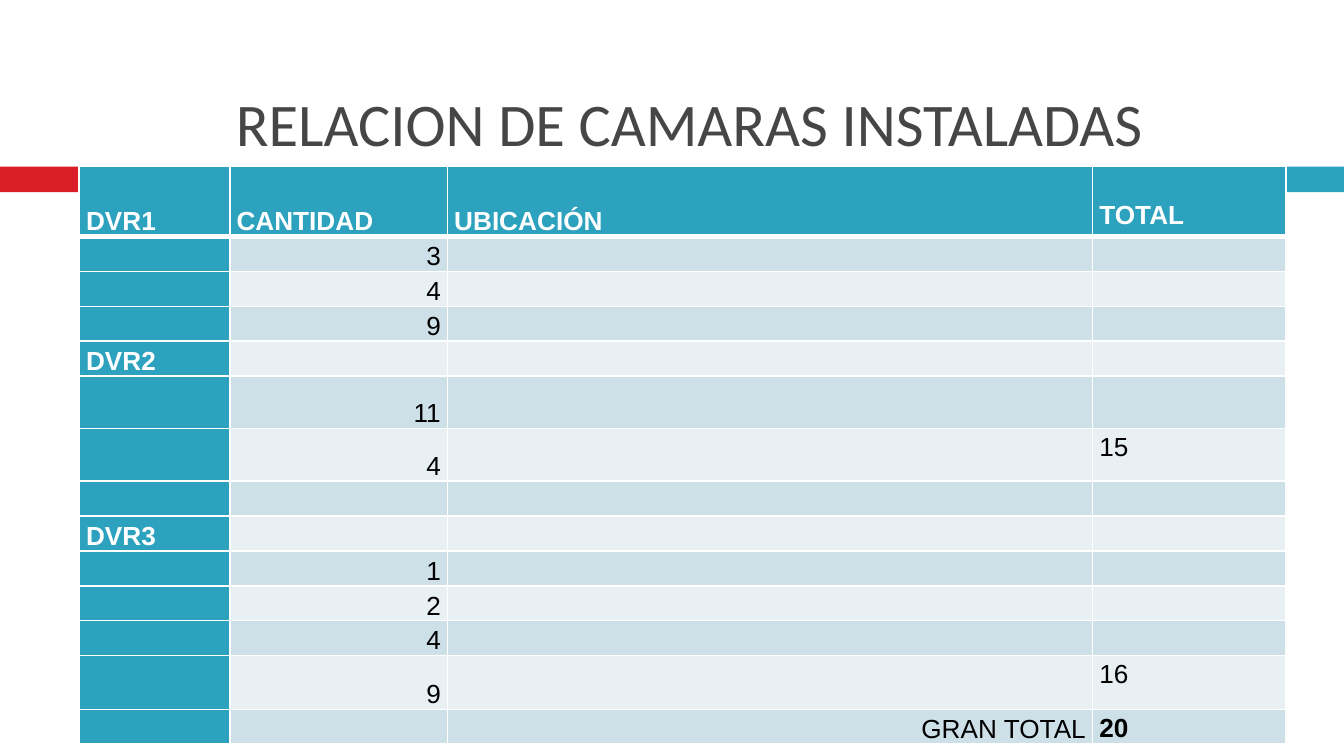
from lxml.etree import SubElement
from pptx import Presentation
from pptx.dml.color import RGBColor
from pptx.enum.shapes import MSO_SHAPE
from pptx.enum.text import MSO_ANCHOR, PP_ALIGN
from pptx.oxml.ns import qn
from pptx.util import Inches, Pt

# Content
TITLE = "RELACION DE CAMARAS INSTALADAS"
HEAD = ("DVR1", "CANTIDAD", "UBICACIÓN", "TOTAL")
# Each row: height, then the four cells
ROWS = [
    (0.52, *HEAD),
    (0.26, "", "3", "", ""),
    (0.26, "", "4", "", ""),
    (0.26, "", "9", "", ""),
    (0.26, "DVR2", "", "", ""),
    (0.39, "", "11", "", ""),
    (0.39, "", "4", "", "15"),
    (0.26, "", "", "", ""),
    (0.26, "DVR3", "", "", ""),
    (0.26, "", "1", "", ""),
    (0.26, "", "2", "", ""),
    (0.26, "", "4", "", ""),
    (0.4, "", "9", "", "16"),
    (0.26, "", "", "GRAN TOTAL", "20"),
]
COLS = (1.12, 1.62, 4.8, 1.44)
COLORS = {
    "red": "DA1F28", "teal": "2DA2BF", "dark": "CDE0E8", "light": "E8F0F4",
    "title": "464646", "white": "FFFFFF", "black": "000000",
}
BARS = [(0, 0.58, "red"), (0.65, 9.35, "teal")]
TOP = 1.24


def color(name):
    return RGBColor.from_string(COLORS[name])


def add_run(para, text, font, size, tone, bold=False):
    run = para.add_run()
    run.text = text
    run.font.name = font
    run.font.size = Pt(size)
    run.font.bold = bold
    run.font.color.rgb = color(tone)


def add_edges(cell, row):
    """White lines, thick between the header and the body."""
    props = cell._tc.get_or_add_tcPr()
    thick = {0: "lnB", 1: "lnT"}.get(row)
    for side in ("lnL", "lnR", "lnT", "lnB"):
        width = Pt(3 if side == thick else 1)
        line = SubElement(props, qn(f"a:{side}"), w=str(width))
        fill = SubElement(line, qn("a:solidFill"))
        SubElement(fill, qn("a:srgbClr"), val=COLORS["white"])


def fill_cell(cell, row, col, text):
    main = row == 0 or col == 0
    add_edges(cell, row)
    cell.fill.solid()
    cell.fill.fore_color.rgb = color("teal" if main else "dark" if row % 2 else "light")
    cell.margin_left = cell.margin_right = Inches(0.05)
    cell.margin_top = cell.margin_bottom = 0
    low = col < 3 or row == 0
    cell.vertical_anchor = MSO_ANCHOR.BOTTOM if low else MSO_ANCHOR.TOP
    para = cell.text_frame.paragraphs[0]
    para.line_spacing = 1.15
    if not text:
        SubElement(para._p, qn("a:endParaRPr"), sz="1400")
        return
    para.alignment = PP_ALIGN.RIGHT if not main and col < 3 else PP_ALIGN.LEFT
    last = row == len(ROWS) - 1 and col == 3
    add_run(para, text, "Arial", 14, "white" if main else "black", main or last)


deck = Presentation()
# A 16:9 page
deck.slide_width = Inches(10)
deck.slide_height = deck.slide_width * 9 // 16
slide = deck.slides.add_slide(deck.slide_layouts[5])

# Title
title = slide.shapes.title
title.left, title.top = Inches(0.67), Inches(0.13)
title.width, title.height = Inches(8.92), Inches(1.1)
frame = title.text_frame
frame.word_wrap = True
frame.vertical_anchor = MSO_ANCHOR.BOTTOM
frame.paragraphs[0].alignment = PP_ALIGN.CENTER
add_run(frame.paragraphs[0], TITLE, "Calibri", 32.4, "title")

# Bars behind the table
for left, width, tone in BARS:
    bar = slide.shapes.add_shape(
        MSO_SHAPE.RECTANGLE, Inches(left), Inches(TOP), Inches(width), Inches(0.19))
    bar.shadow.inherit = False
    bar.fill.solid()
    bar.fill.fore_color.rgb = color(tone)
    bar.line.fill.background()

# Table
high = sum(row[0] for row in ROWS)
table = slide.shapes.add_table(
    len(ROWS), len(COLS), Inches(0.59), Inches(TOP),
    Inches(sum(COLS)), Inches(high)).table
for col, width in enumerate(COLS):
    table.columns[col].width = Inches(width)
for row, (height, *texts) in enumerate(ROWS):
    table.rows[row].height = Inches(height)
    for col, text in enumerate(texts):
        fill_cell(table.cell(row, col), row, col, text)
table.cell(0, 3).margin_bottom = Inches(0.05)

deck.save("out.pptx")
